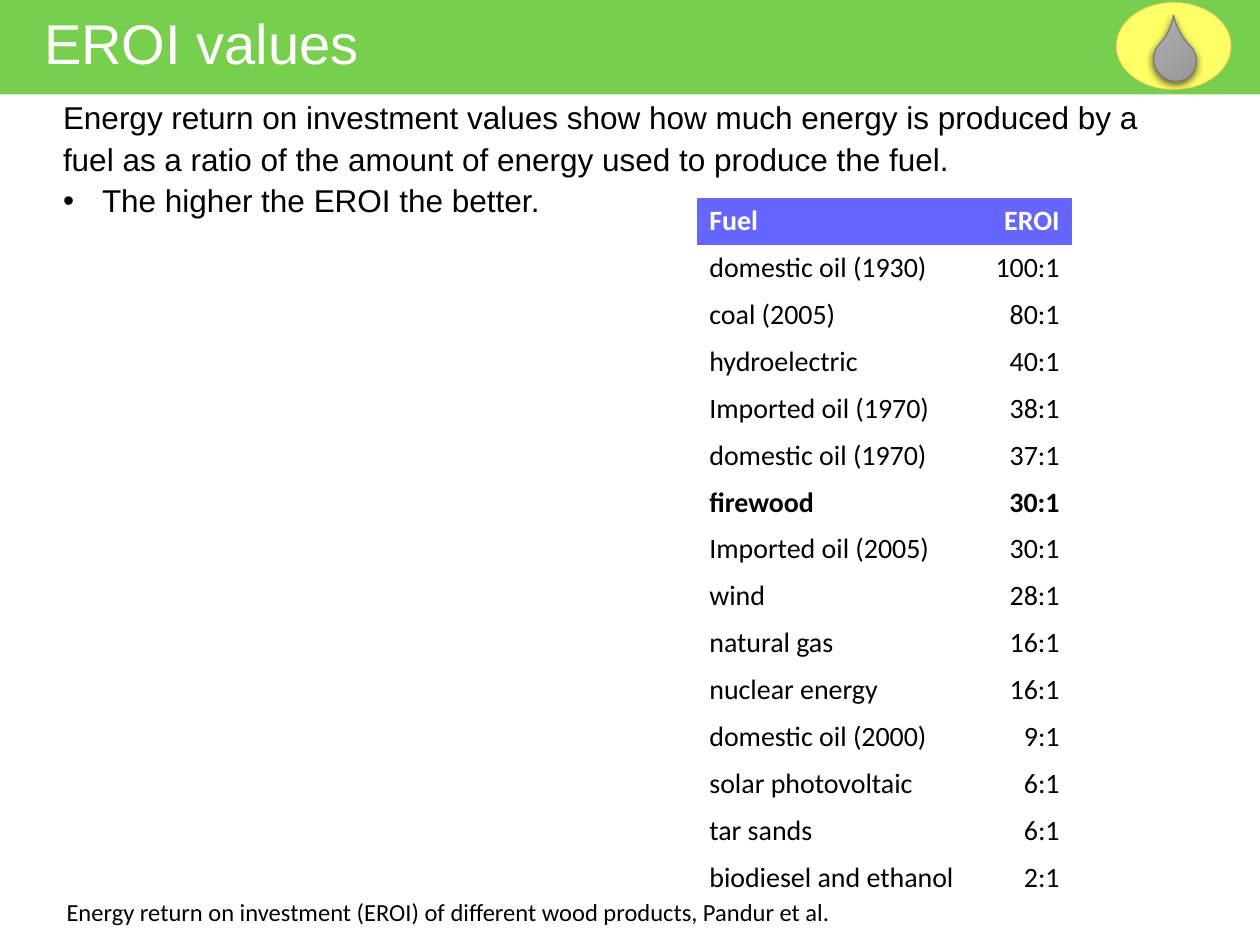
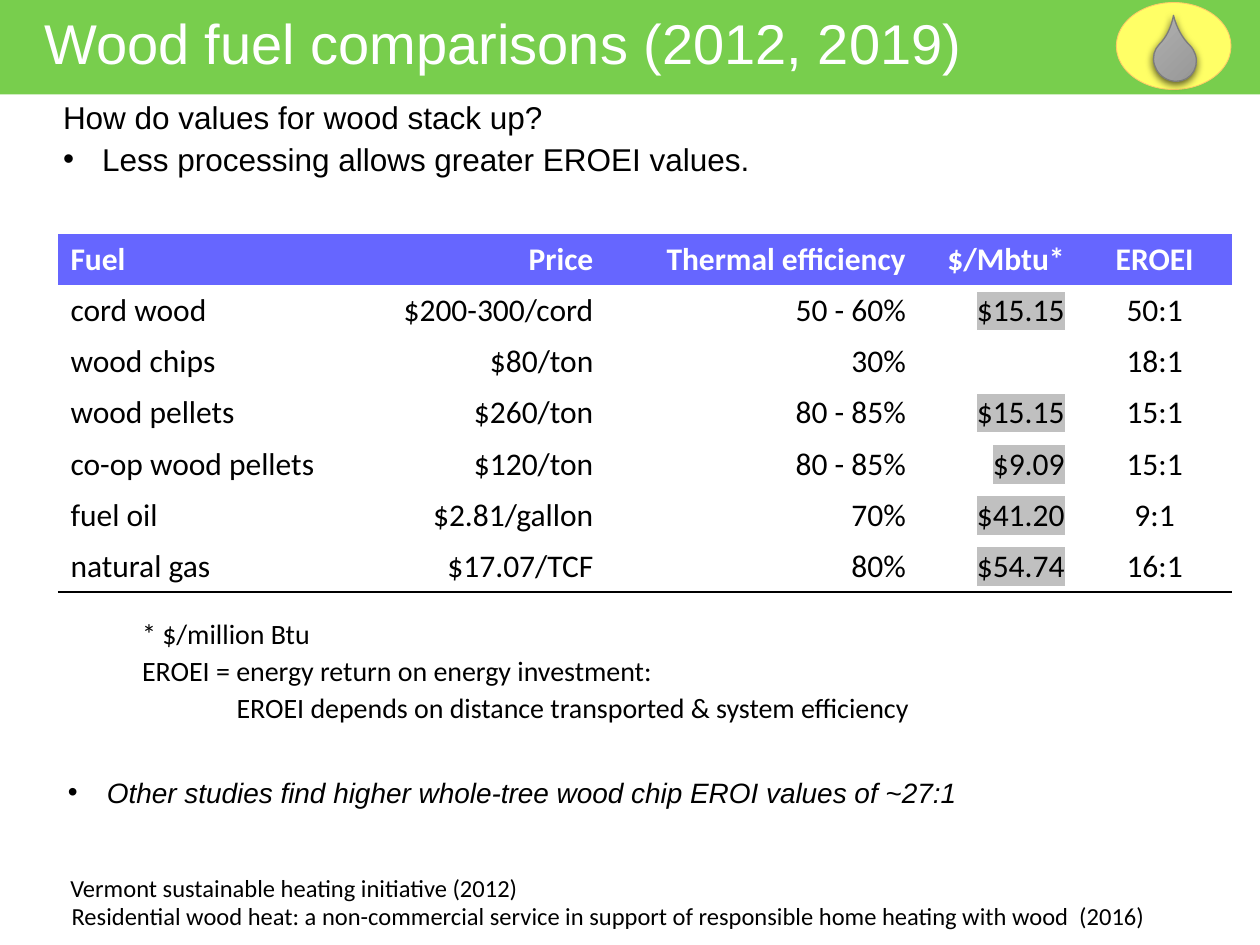
import pptx
import pptx.dml.color
import pptx.enum.shapes
import pptx.enum.text
import pptx.oxml
import pptx.oxml.ns
import pptx.util

Inches, Pt = pptx.util.Inches, pptx.util.Pt
qn = pptx.oxml.ns.qn
SHAPE = pptx.enum.shapes.MSO_SHAPE
ALIGN = pptx.enum.text.PP_ALIGN
ANCHOR = pptx.enum.text.MSO_ANCHOR
FIT = pptx.enum.text.MSO_AUTO_SIZE

GREEN, BLUE, WHITE, BLACK, GREY = "78CE4D", "6666FF", "FFFFFF", "000000", "C0C0C0"
SIDES = {"l": ALIGN.LEFT, "r": ALIGN.RIGHT, "c": ALIGN.CENTER}
PLAIN_GRID = "{2D5ABB26-0587-4C30-8999-92F81FD0307C}"

TITLE = dict(name="Arial", size=Pt(32), color=WHITE)
BODY = dict(name="Arial", size=Pt(18), color=BLACK)
ASIDE = dict(name="Arial", size=Pt(16), color=BLACK, italic=True)
NOTE = dict(name="Calibri", size=Pt(16), color=BLACK)
SOURCE = dict(name="Calibri", size=Pt(14), color=BLACK)

EROI = [
    ("Fuel", "EROI"),
    ("domestic oil (1930)", "100:1"),
    ("coal (2005)", "80:1"),
    ("hydroelectric", "40:1"),
    ("Imported oil (1970)", "38:1"),
    ("domestic oil (1970)", "37:1"),
    ("firewood", "30:1"),
    ("Imported oil (2005)", "30:1"),
    ("wind", "28:1"),
    ("natural gas", "16:1"),
    ("nuclear energy", "16:1"),
    ("domestic oil (2000)", "9:1"),
    ("solar photovoltaic", "6:1"),
    ("tar sands", "6:1"),
    ("biodiesel and ethanol", "2:1"),
]
WOOD = [
    ("Fuel", "Price", "Thermal efficiency", "$/Mbtu*", "EROEI"),
    ("cord wood", "$200-300/cord", "50 - 60%", "$15.15", "50:1"),
    ("wood chips", "$80/ton", "30%", "", "18:1"),
    ("wood pellets", "$260/ton", "80 - 85%", "$15.15", "15:1"),
    ("co-op wood pellets", "$120/ton", "80 - 85%", "$9.09", "15:1"),
    ("fuel oil", "$2.81/gallon", "70%", "$41.20", "9:1"),
    ("natural gas", "$17.07/TCF", "80%", "$54.74", "16:1"),
]


def ink(code):
    return pptx.dml.color.RGBColor.from_string(code)


def xml(text):
    """Parse a fragment that uses the a: prefix."""
    head, rest = text.split(">", 1) if not text.endswith("/>") else (text[:-2], None)
    space = " " + pptx.oxml.ns.nsdecls("a")
    return pptx.oxml.parse_xml(head + space + ("/>" if rest is None else ">" + rest))


def place(shape, box):
    for key, size in zip(("left", "top", "width", "height"), box):
        setattr(shape, key, Inches(size))


def write(par, text, look):
    run = par.add_run()
    run.text = text
    for key, value in look.items():
        if key == "color":
            run.font.color.rgb = ink(value)
        else:
            setattr(run.font, key, value)
    return run


def indent(par, left, first=0, mark=None):
    props = par._p.get_or_add_pPr()
    props.set("marL", str(Inches(left)))
    props.set("indent", str(Inches(first)))
    if mark:
        props.append(xml('<a:buFont typeface="Arial"/>'))
        props.append(xml(f'<a:buChar char="{mark}"/>'))
    else:
        props.append(xml("<a:buNone/>"))


def fill_text(shape, lines, look, gap=1.1):
    """Write lines; a leading bullet or tab in a line sets its indent."""
    frame = shape.text_frame
    frame.word_wrap = True
    frame.auto_size = FIT.NONE
    frame.vertical_anchor = ANCHOR.TOP
    for i, line in enumerate(lines):
        par = frame.add_paragraph() if i else frame.paragraphs[0]
        par.alignment = ALIGN.LEFT
        par.line_spacing = gap
        par.space_before = Pt(0)
        if line[0] == "•":
            indent(par, 0.31, -0.31, "•")
        else:
            indent(par, 0.75 if line[0] == "\t" else 0)
        write(par, line.lstrip("•\t"), look)


def add_text(slide, box, lines, look, gap=1.1):
    shape = slide.shapes.add_textbox(*map(Inches, box))
    fill_text(shape, lines, look, gap)


def add_source(slide, left, top, text):
    add_text(slide, (left, top, 9.3, 0.34), [text], SOURCE, 1)


def add_form(shapes, kind, box, fill=None, line=None, width=0):
    shape = shapes.add_shape(kind, *map(Inches, box))
    shape.shadow.inherit = False
    if fill:
        shape.fill.solid()
        shape.fill.fore_color.rgb = ink(fill)
    if line:
        shape.line.color.rgb = ink(line)
        shape.line.width = Pt(width)
    else:
        shape.line.fill.background()
    return shape


def add_drop(slide):
    group = slide.shapes.add_group_shape()
    add_form(group.shapes, SHAPE.OVAL, (8.86, 0.02, 0.91, 0.69), "FFFF66", "FFCC66", 0.5)
    drop = add_form(group.shapes, SHAPE.TEAR, (9.16, 0.3, 0.33, 0.35),
                    line="7C7C7C", width=0.75)
    drop.adjustments[0] = 1.47
    drop.rotation = 314.8
    drop.fill.gradient()
    drop.fill.gradient_angle = 270
    for stop, code, spot in zip(drop.fill.gradient_stops, ("AFAFAF", "939393"), (0, 1)):
        stop.color.rgb = ink(code)
        stop.position = spot
    effect = drop.element.spPr.find(qn("a:effectLst"))
    effect.append(xml(
        f'<a:outerShdw blurRad="{Pt(4.5)}" dist="{Pt(1.5)}" dir="5400000">'
        f'<a:srgbClr val="{BLACK}"><a:alpha val="63000"/></a:srgbClr></a:outerShdw>'))


def add_slide(deck, title, lines, tall):
    slide = deck.slides.add_slide(deck.slide_layouts[1])
    band = add_form(slide.shapes, SHAPE.RECTANGLE, (0, 0, 10, 0.75), GREEN)
    slide.shapes.element.insert(2, band.element)
    head, body = slide.placeholders
    place(head, (0.25, 0.02, 8.5, 0.64))
    fill_text(head, [title], TITLE, 1)
    place(body, (0.4, 0.7, 9.13, tall))
    fill_text(body, lines, BODY)
    add_drop(slide)
    return slide


def add_grid(slide, spot, widths, step, rows, sides, size, bold=()):
    """Add a table with a blue head row; rows named in bold stand out."""
    box = (*spot, sum(widths), step * len(rows))
    frame = slide.shapes.add_table(len(rows), len(widths), *map(Inches, box))
    next(frame.element.iter(qn("a:tableStyleId"))).text = PLAIN_GRID
    table = frame.table
    table.horz_banding = False
    for col, width in zip(table.columns, widths):
        col.width = Inches(width)
    for r, row in enumerate(rows):
        table.rows[r].height = Inches(step)
        look = dict(name="Calibri", size=Pt(size), color=BLACK if r else WHITE,
                    bold=r == 0 or row[0] in bold)
        for c, text in enumerate(row):
            cell = table.cell(r, c)
            if r:
                cell.fill.background()
            else:
                cell.fill.solid()
                cell.fill.fore_color.rgb = ink(BLUE)
            par = cell.text_frame.paragraphs[0]
            par.alignment = SIDES[sides[c]]
            if text:
                write(par, text, look)
    return table


def shade(cell):
    """Highlight the words of a cell in grey."""
    for run in cell.text_frame.paragraphs[0].runs:
        latin = run.font._element.find(qn("a:latin"))
        latin.addprevious(xml(f'<a:highlight><a:srgbClr val="{GREY}"/></a:highlight>'))


def rule(cell):
    """Draw a black line under a cell."""
    cell._tc.get_or_add_tcPr().insert(0, xml(
        f'<a:lnB w="{Pt(1)}"><a:solidFill><a:srgbClr val="{BLACK}"/></a:solidFill></a:lnB>'))


def add_eroi(deck):
    slide = add_slide(deck, "EROI values", [
        "Energy return on investment values show how much energy is produced by a "
        "fuel as a ratio of the amount of energy used to produce the fuel.",
        "•The higher the EROI the better."], 1.1)
    add_source(slide, 0.43, 7.07,
               "Energy return on investment (EROI) of different wood products, Pandur et al.")
    add_grid(slide, (5.53, 1.57), (2.19, 0.79), 5.5 / len(EROI), EROI, "lr", 16, ["firewood"])


def add_wood(deck):
    slide = add_slide(deck, "Wood fuel comparisons (2012, 2019)", [
        "How do values for wood stack up?",
        "•Less processing allows greater EROEI values."], 0.76)
    table = add_grid(slide, (0.46, 1.86), (2.41, 1.94, 2.48, 1.26, 1.23),
                     2.84 / len(WOOD), WOOD, "lrrrc", 18)
    for r in range(1, len(WOOD)):
        shade(table.cell(r, 3))
    for cell in table.rows[len(WOOD) - 1].cells:
        rule(cell)
    add_text(slide, (1.03, 4.82, 7.82, 0.99), [
        "* $/million Btu",
        "EROEI = energy return on energy investment:",
        "\tEROEI depends on distance transported & system efficiency"], NOTE)
    add_text(slide, (0.44, 6.08, 9.13, 0.39), [
        "•Other studies find higher whole-tree wood chip EROI values of ~27:1"], ASIDE)
    add_source(slide, 0.46, 6.88, "Vermont sustainable heating initiative (2012)")
    add_source(slide, 0.47, 7.1,
               "Residential wood heat: a non-commercial service in support of "
               "responsible home heating with wood  (2016)")


def main():
    deck = pptx.Presentation()
    deck.slide_width, deck.slide_height = Inches(10), Inches(7.5)
    add_eroi(deck)
    add_wood(deck)
    deck.save("out.pptx")


if __name__ == "__main__":
    main()
